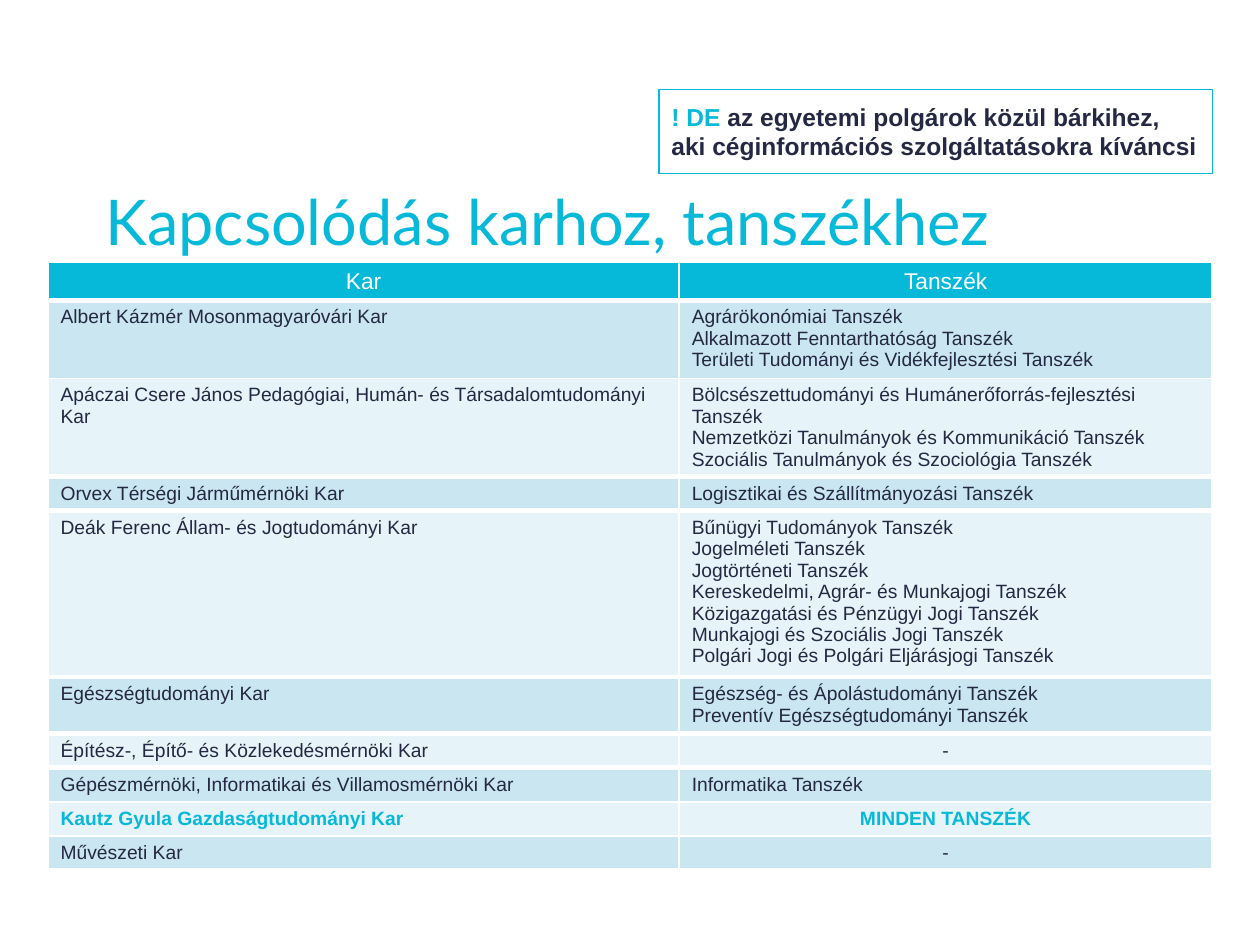
from lxml.etree import SubElement
from pptx import Presentation
from pptx.dml.color import RGBColor
from pptx.enum.shapes import MSO_SHAPE
from pptx.enum.text import MSO_ANCHOR, MSO_AUTO_SIZE, PP_ALIGN
from pptx.oxml.ns import qn
from pptx.util import Pt

CYAN = RGBColor(0x07, 0xB9, 0xD9)
NAVY = RGBColor(0x24, 0x28, 0x43)
WHITE = RGBColor(0xFF, 0xFF, 0xFF)
BANDS = (RGBColor(0xCA, 0xE6, 0xF1), RGBColor(0xE6, 0xF3, 0xF8))

COLUMN_WIDTHS = (360.7, 304.6)
THIN, THICK = 1, 3
ALL_DEPARTMENTS = "MINDEN TANSZÉK"
CENTERED = ("-", ALL_DEPARTMENTS)

ROWS = [
    (21.6, THIN, THICK, "Kar", ["Tanszék"]),
    (44.6, THIN, THIN, "Albert Kázmér Mosonmagyaróvári Kar", [
        "Agrárökonómiai Tanszék",
        "Alkalmazott Fenntarthatóság Tanszék",
        "Területi Tudományi és Vidékfejlesztési Tanszék"]),
    (44.6, THIN, THICK, "Apáczai Csere János Pedagógiai, Humán- és Társadalomtudományi Kar", [
        "Bölcsészettudományi és Humánerőforrás-fejlesztési Tanszék",
        "Nemzetközi Tanulmányok és Kommunikáció Tanszék",
        "Szociális Tanulmányok és Szociológia Tanszék"]),
    (19.4, THICK, THICK, "Orvex Térségi Járműmérnöki Kar", [
        "Logisztikai és Szállítmányozási Tanszék"]),
    (95, THICK, THICK, "Deák Ferenc Állam- és Jogtudományi Kar", [
        "Bűnügyi Tudományok Tanszék",
        "Jogelméleti Tanszék",
        "Jogtörténeti Tanszék",
        "Kereskedelmi, Agrár- és Munkajogi Tanszék",
        "Közigazgatási és Pénzügyi Jogi Tanszék",
        "Munkajogi és Szociális Jogi Tanszék",
        "Polgári Jogi és Polgári Eljárásjogi Tanszék"]),
    (32.4, THICK, THICK, "Egészségtudományi Kar", [
        "Egészség- és Ápolástudományi Tanszék",
        "Preventív Egészségtudományi Tanszék"]),
    (19.4, THICK, THICK, "Építész-, Építő- és Közlekedésmérnöki Kar", ["-"]),
    (19.4, THICK, THIN, "Gépészmérnöki, Informatikai és Villamosmérnöki Kar", [
        "Informatika Tanszék"]),
    (19.4, THIN, THIN, "Kautz Gyula Gazdaságtudományi Kar", [ALL_DEPARTMENTS]),
    (19.4, THIN, THICK, "Művészeti Kar", ["-"]),
]


def add_span(para, text, font, size, color, bold=None):
    """Append one formatted run to a paragraph."""
    span = para.add_run()
    span.text = text
    span.font.name = font
    span.font.size = Pt(size)
    span.font.bold = bold
    span.font.color.rgb = color


def set_borders(cell, top, bottom):
    """Draw white rules around a cell, ahead of its fill."""
    properties = cell._tc.get_or_add_tcPr()
    for side, weight in (("L", THIN), ("R", THIN), ("T", top), ("B", bottom)):
        rule = SubElement(properties, qn(f"a:ln{side}"), w=str(Pt(weight)))
        fill = SubElement(rule, qn("a:solidFill"))
        SubElement(fill, qn("a:srgbClr"), val=str(WHITE))


def fill_cell(cell, lines, size, color, bold, background, centered):
    """Write lines into a table cell and colour it."""
    cell.fill.solid()
    cell.fill.fore_color.rgb = background
    para = cell.text_frame.paragraphs[0]
    para.alignment = PP_ALIGN.CENTER if centered else PP_ALIGN.LEFT
    for index, line in enumerate(lines):
        if index:
            para.add_line_break()
        add_span(para, line, "Arial", size, color, bold)


def place_title(page, box):
    """Move the title placeholder into its box and write the title."""
    title = page.shapes.title
    title.left, title.top, title.width, title.height = map(Pt, box)
    frame = title.text_frame
    frame.auto_size = MSO_AUTO_SIZE.NONE
    frame.vertical_anchor = MSO_ANCHOR.TOP
    para = frame.paragraphs[0]
    para.alignment = PP_ALIGN.LEFT
    para.line_spacing = 0.9
    add_span(para, "Kapcsolódás karhoz, tanszékhez", "Lato", 36, CYAN)


def place_faculty_table(page, box):
    """Build the table of faculties and departments."""
    table = page.shapes.add_table(len(ROWS), len(COLUMN_WIDTHS), *map(Pt, box)).table
    for column, width in zip(table.columns, COLUMN_WIDTHS):
        column.width = Pt(width)
    for index, (height, top, bottom, faculty, departments) in enumerate(ROWS):
        table.rows[index].height = Pt(height)
        header = index == 0
        highlighted = departments == [ALL_DEPARTMENTS]
        background = CYAN if header else BANDS[(index - 1) % 2]
        color = WHITE if header else CYAN if highlighted else NAVY
        bold = None if header else highlighted
        for column, lines in enumerate(([faculty], departments)):
            cell = table.cell(index, column)
            set_borders(cell, top, bottom)
            centered = header or lines[0] in CENTERED
            fill_cell(cell, lines, 13 if header else 11, color, bold, background, centered)
            if header:
                cell.vertical_anchor = MSO_ANCHOR.MIDDLE


def place_callout(page, box):
    """Add the outlined remark above the title."""
    callout = page.shapes.add_shape(MSO_SHAPE.RECTANGLE, *map(Pt, box))
    callout.shadow.inherit = False
    callout.fill.background()
    callout.line.color.rgb = CYAN
    callout.line.width = Pt(0.75)
    frame = callout.text_frame
    frame.word_wrap = True
    frame.auto_size = MSO_AUTO_SIZE.SHAPE_TO_FIT_TEXT
    frame.vertical_anchor = MSO_ANCHOR.TOP
    frame.margin_left = frame.margin_right = Pt(7.2)
    frame.margin_top = frame.margin_bottom = Pt(7.2)
    para = frame.paragraphs[0]
    para.alignment = PP_ALIGN.LEFT
    add_span(para, "! DE ", "Arial", 14, CYAN, True)
    add_span(para, "az egyetemi polgárok közül bárkihez, aki céginformációs "
             "szolgáltatásokra kíváncsi", "Arial", 14, NAVY, True)


def main():
    """Build and save the deck."""
    deck = Presentation()
    deck.slide_width, deck.slide_height = Pt(720), Pt(540)
    page = deck.slides.add_slide(deck.slide_layouts[5])
    place_faculty_table(page, (27.4, 149.8, sum(COLUMN_WIDTHS), sum(row[0] for row in ROWS)))
    place_title(page, (53.3, 105.8, 601.9, 43.2))
    place_callout(page, (376.6, 51.1, 316.1, 48.2))
    deck.save("out.pptx")


if __name__ == "__main__":
    main()
